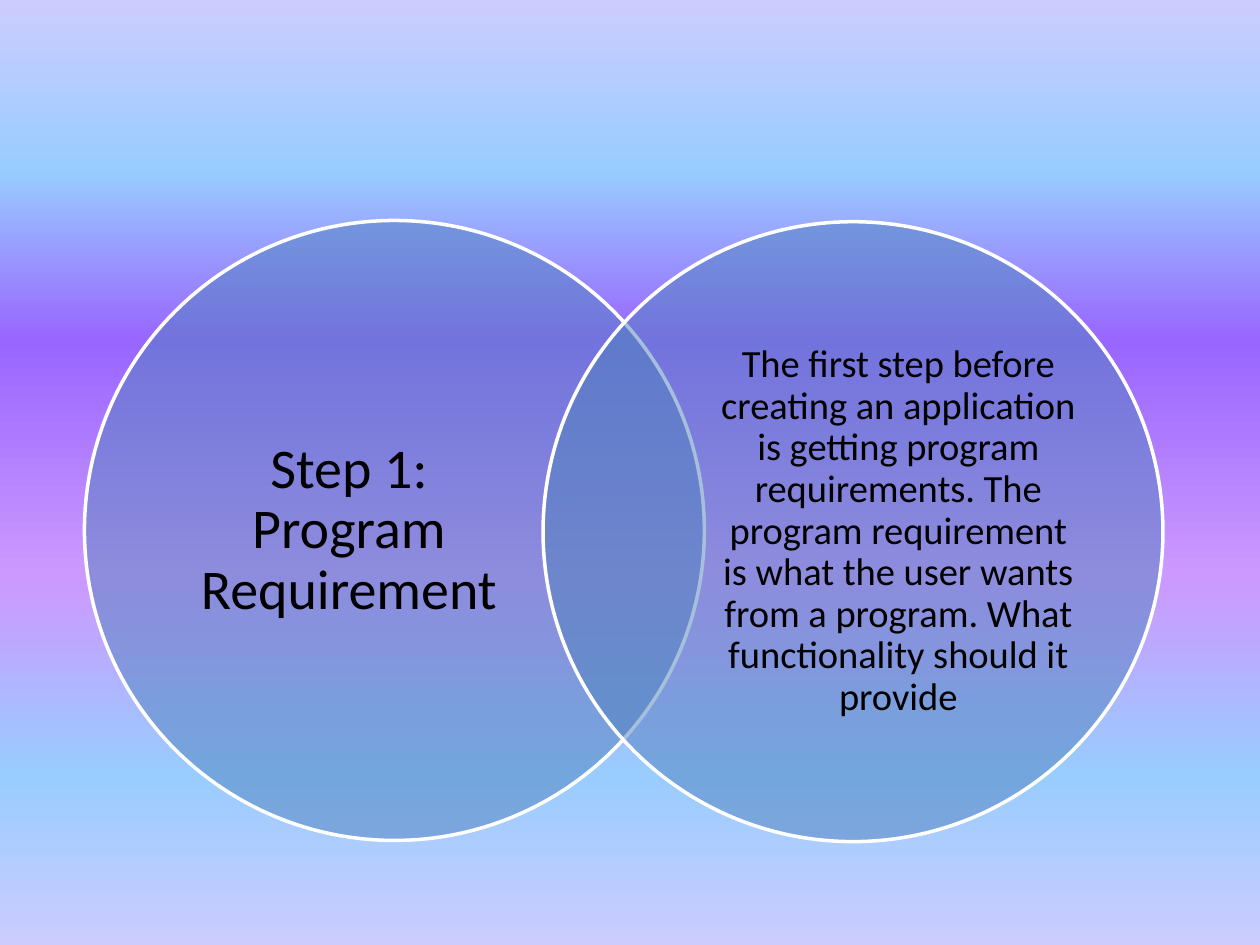
from pptx import Presentation
from pptx.dml.color import RGBColor
from pptx.enum.shapes import MSO_SHAPE as Shape
from pptx.enum.text import MSO_ANCHOR as Anchor, PP_ALIGN as Align
from pptx.oxml.ns import qn
from pptx.oxml.xmlchemy import OxmlElement as Node
from pptx.util import Inches, Pt

WIDE, HIGH = 10, 7.5
SKY = [(0, "CCCCFF"), (18, "99CCFF"), (36, "9966FF"),
       (61, "CC99FF"), (82, "99CCFF"), (100, "CCCCFF")]
SIZE = 4.92
TEXT_W, TEXT_H = 2.84, 3.76
CIRCLES = [
    (0.67, 1.75, 0.68, 32, "Step 1: Program Requirement"),
    (4.31, 1.76, 1.4, 22,
     "The first step before creating an application is getting program "
     "requirements. The program requirement is what the user wants from a "
     "program. What functionality should it provide"),
]


def color(code):
    return RGBColor.from_string(code)


def paint_sky(slide):
    fill = slide.background.fill
    fill.gradient()
    fill.gradient_angle = 270
    stops = next(slide.element.iter(qn("a:gsLst")))
    for old in list(stops):
        stops.remove(old)
    for pos, code in SKY:
        stop, tint = Node("a:gs"), Node("a:srgbClr")
        stop.set("pos", str(pos * 1000))
        tint.set("val", code)
        stop.append(tint)
        stops.append(stop)


def add_disc(slide, left, top):
    disc = slide.shapes.add_shape(
        Shape.OVAL, Inches(left), Inches(top), Inches(SIZE), Inches(SIZE))
    disc.shadow.inherit = False
    disc.fill.solid()
    disc.fill.fore_color.rgb = color("4F81BD")
    alpha = Node("a:alpha")
    alpha.set("val", "50000")
    next(disc.element.spPr.iter(qn("a:srgbClr"))).append(alpha)
    disc.line.color.rgb = color("FFFFFF")
    disc.line.width = Pt(2)


def add_label(slide, left, top, size, text):
    box = slide.shapes.add_textbox(
        Inches(left), Inches(top), Inches(TEXT_W), Inches(TEXT_H))
    frame = box.text_frame
    frame.word_wrap = True
    frame.vertical_anchor = Anchor.MIDDLE
    frame.margin_left = frame.margin_right = 0
    frame.margin_top = frame.margin_bottom = 0
    para = frame.paragraphs[0]
    para.text = text
    para.alignment = Align.CENTER
    para.line_spacing = 0.9
    para.space_after = Pt(0.35 * size)
    para.font.size = Pt(size)
    para.font.name = "Calibri"
    para.font.color.rgb = color("000000")


def main():
    deck = Presentation()
    deck.slide_width, deck.slide_height = Inches(WIDE), Inches(HIGH)
    slide = deck.slides.add_slide(deck.slide_layouts[6])
    paint_sky(slide)
    for left, top, inset, size, text in CIRCLES:
        add_disc(slide, left, top)
        add_label(slide, left + inset, top + (SIZE - TEXT_H) / 2, size, text)
    deck.save("out.pptx")


if __name__ == "__main__":
    main()
